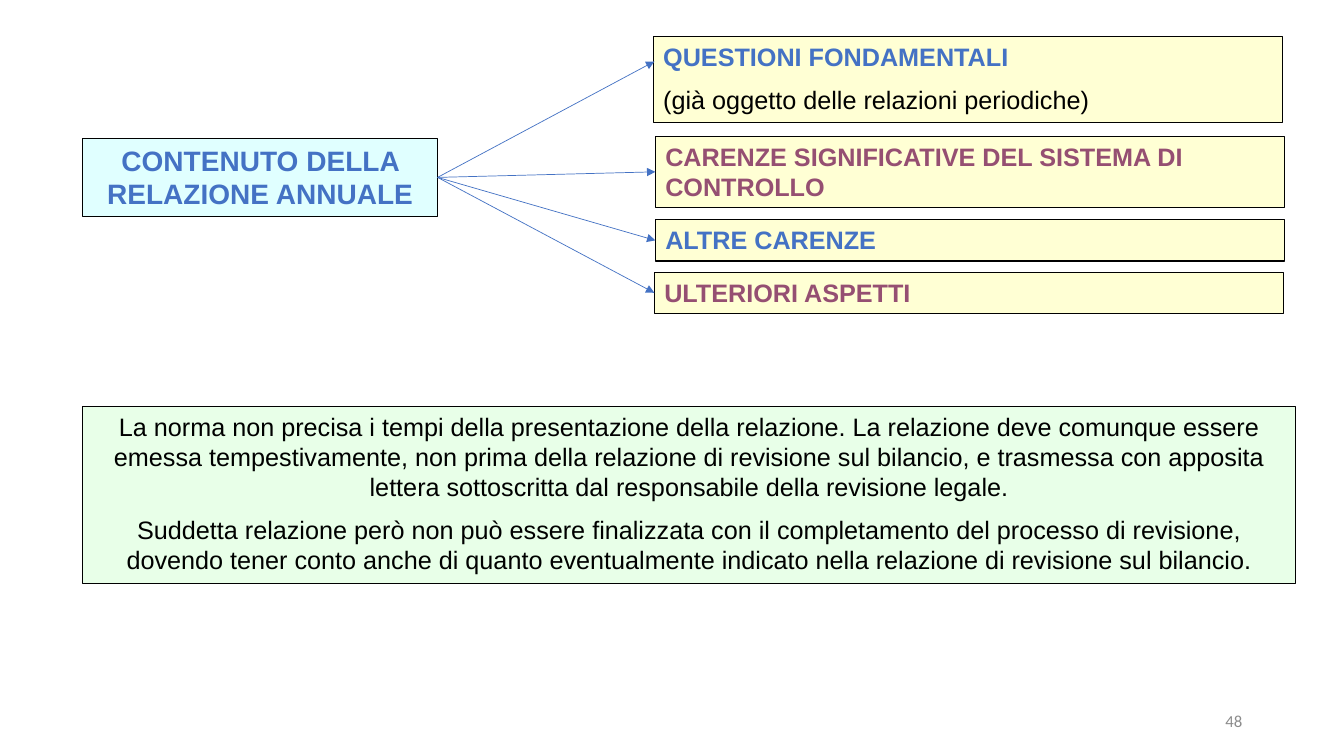
"""Build the slide on the contents of the annual report."""
from dataclasses import dataclass

from lxml import etree
from pptx import Presentation
from pptx import util as u
from pptx.dml.color import RGBColor
from pptx.enum import shapes, text
from pptx.oxml import ns

BLACK = RGBColor(0x00, 0x00, 0x00)
BLUE = RGBColor(0x44, 0x72, 0xC4)
PLUM = RGBColor(0x95, 0x4F, 0x72)
GREY = RGBColor(0x8C, 0x8C, 0x8C)
CYAN = RGBColor(0xCC, 0xFF, 0xFF)
YELLOW = RGBColor(0xFF, 0xFF, 0x99)
GREEN = RGBColor(0xCC, 0xFF, 0xCC)
LEFT = text.PP_ALIGN.LEFT
CENTER = text.PP_ALIGN.CENTER
RIGHT_SIDE, LEFT_SIDE = 3, 1


@dataclass(frozen=True)
class Para:
    text: str
    color: RGBColor = BLACK
    bold: bool = False
    size: int = 18


@dataclass(frozen=True)
class Box:
    left: float
    top: float
    width: float
    height: float
    fill: RGBColor
    opacity: int
    align: text.PP_ALIGN
    paras: tuple[Para, ...]


def topic(left: float, top: float, height: float, *paras: Para) -> Box:
    """Describe one yellow topic box."""
    return Box(left, top, 6.24, height, YELLOW, 42, LEFT, paras)


SOURCE = Box(0.82, 1.37, 3.52, 0.78, CYAN, 60, CENTER,
             (Para("CONTENUTO DELLA RELAZIONE ANNUALE", BLUE, True, 20),))
KEY_ISSUES = topic(6.48, 0.36, 0.86,
                   Para("QUESTIONI FONDAMENTALI", BLUE, True),
                   Para("(già oggetto delle relazioni periodiche)"))
OTHER_TOPICS = (
    topic(6.5, 1.35, 0.71, Para("CARENZE SIGNIFICATIVE DEL SISTEMA DI CONTROLLO", PLUM, True)),
    topic(6.5, 2.18, 0.41, Para("ALTRE CARENZE", BLUE, True)),
    topic(6.49, 2.7, 0.41, Para("ULTERIORI ASPETTI", PLUM, True)),
)
TIMING = Box(0.82, 4.03, 12.03, 1.76, GREEN, 44, CENTER, (
    Para("La norma non precisa i tempi della presentazione della relazione. "
         "La relazione deve comunque essere emessa tempestivamente, non prima della "
         "relazione di revisione sul bilancio, e trasmessa con apposita lettera "
         "sottoscritta dal responsabile della revisione legale."),
    Para("Suddetta relazione però non può essere finalizzata con il completamento del "
         "processo di revisione, dovendo tener conto anche di quanto eventualmente "
         "indicato nella relazione di revisione sul bilancio."),
))


def write(tf, paras: tuple[Para, ...], align: text.PP_ALIGN, font: str = "Arial") -> None:
    """Fill a text frame with paragraphs."""
    tf.word_wrap = True
    for i, para in enumerate(paras):
        p = tf.add_paragraph() if i else tf.paragraphs[0]
        p.text = para.text
        p.alignment = align
        p.space_before = u.Pt(9 if i else 0)
        p.font.name = font
        p.font.size = u.Pt(para.size)
        p.font.bold = para.bold
        p.font.color.rgb = para.color


def draw_box(s, box: Box):
    """Draw a translucent outlined box with its text."""
    sp = s.shapes.add_shape(shapes.MSO_SHAPE.RECTANGLE, u.Inches(box.left), u.Inches(box.top),
                            u.Inches(box.width), u.Inches(box.height))
    sp.shadow.inherit = False
    sp.fill.solid()
    sp.fill.fore_color.rgb = box.fill
    color = sp.fill._xPr.find(".//" + ns.qn("a:srgbClr"))
    etree.SubElement(color, ns.qn("a:alpha"), val=str(box.opacity * 1000))
    sp.line.color.rgb = BLACK
    sp.line.width = u.Pt(0.75)
    sp.text_frame.vertical_anchor = text.MSO_ANCHOR.TOP
    write(sp.text_frame, box.paras, box.align)
    return sp


def draw_arrow(s, source, x: float, y: float):
    """Draw an arrow from the source box to a point."""
    arrow = s.shapes.add_connector(shapes.MSO_CONNECTOR.STRAIGHT, 0, 0, u.Inches(x), u.Inches(y))
    arrow.begin_connect(source, RIGHT_SIDE)
    arrow.line.color.rgb = BLUE
    arrow.line.width = u.Pt(0.5)
    etree.SubElement(arrow.line._get_or_add_ln(), ns.qn("a:tailEnd"), type="triangle")
    etree.SubElement(arrow._element.spPr, ns.qn("a:effectLst"))
    return arrow


def main() -> None:
    """Build and save the slide."""
    prs = Presentation()
    prs.slide_width, prs.slide_height = u.Inches(13.33), u.Inches(7.5)
    s = prs.slides.add_slide(prs.slide_layouts[6])

    source = draw_box(s, SOURCE)
    draw_box(s, KEY_ISSUES)
    topics = [draw_box(s, box) for box in OTHER_TOPICS]
    draw_box(s, TIMING)

    number = s.shapes.add_textbox(u.Inches(9.42), u.Inches(6.95), u.Inches(3), u.Inches(0.4))
    number.text_frame.vertical_anchor = text.MSO_ANCHOR.MIDDLE
    write(number.text_frame, (Para("48", GREY, size=12),), text.PP_ALIGN.RIGHT, "Calibri")

    draw_arrow(s, source, 6.49, 0.61)
    for box, sp in zip(OTHER_TOPICS, topics):
        arrow = draw_arrow(s, source, box.left, box.top + box.height / 2)
        arrow.end_connect(sp, LEFT_SIDE)

    prs.save("out.pptx")


if __name__ == "__main__":
    main()
